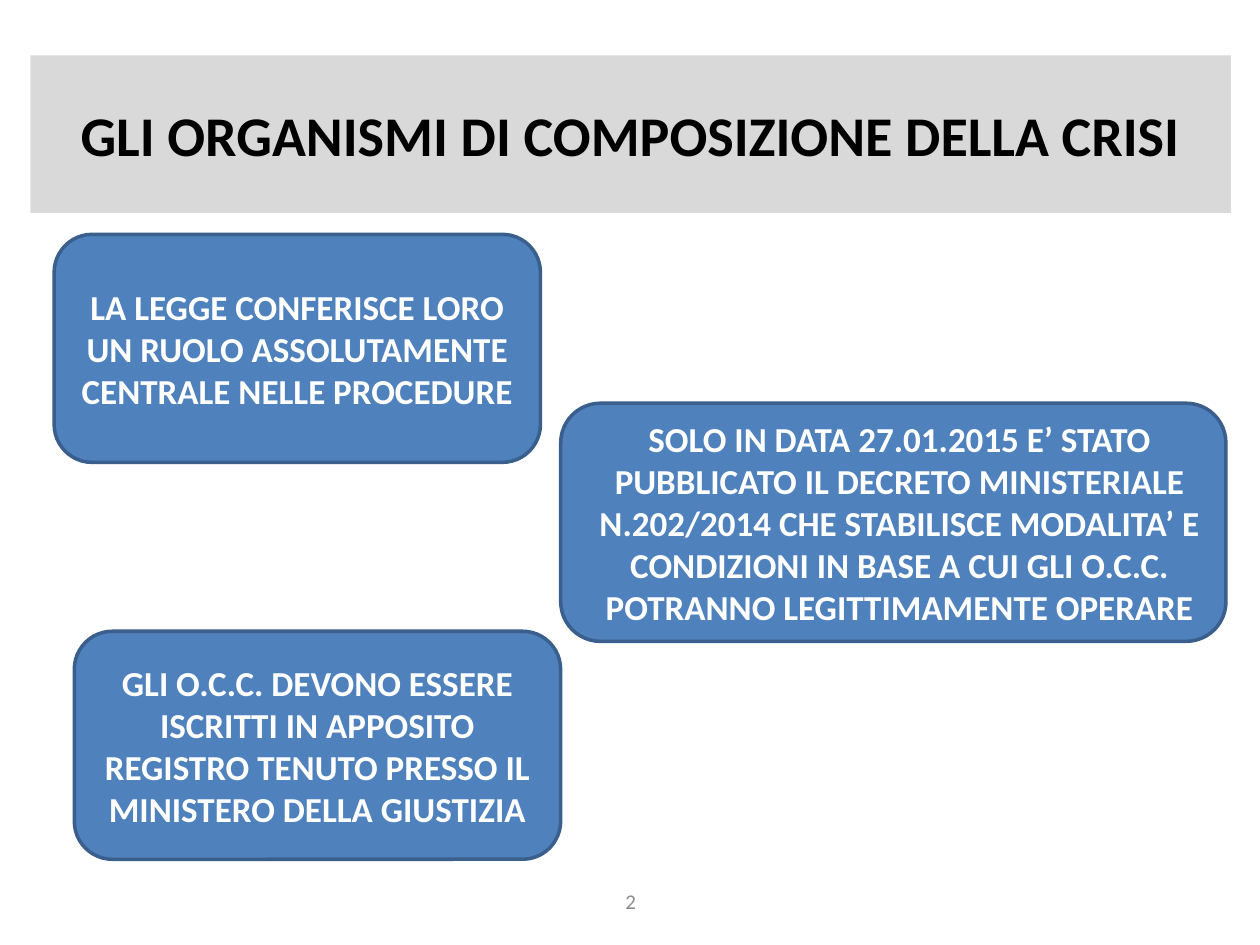
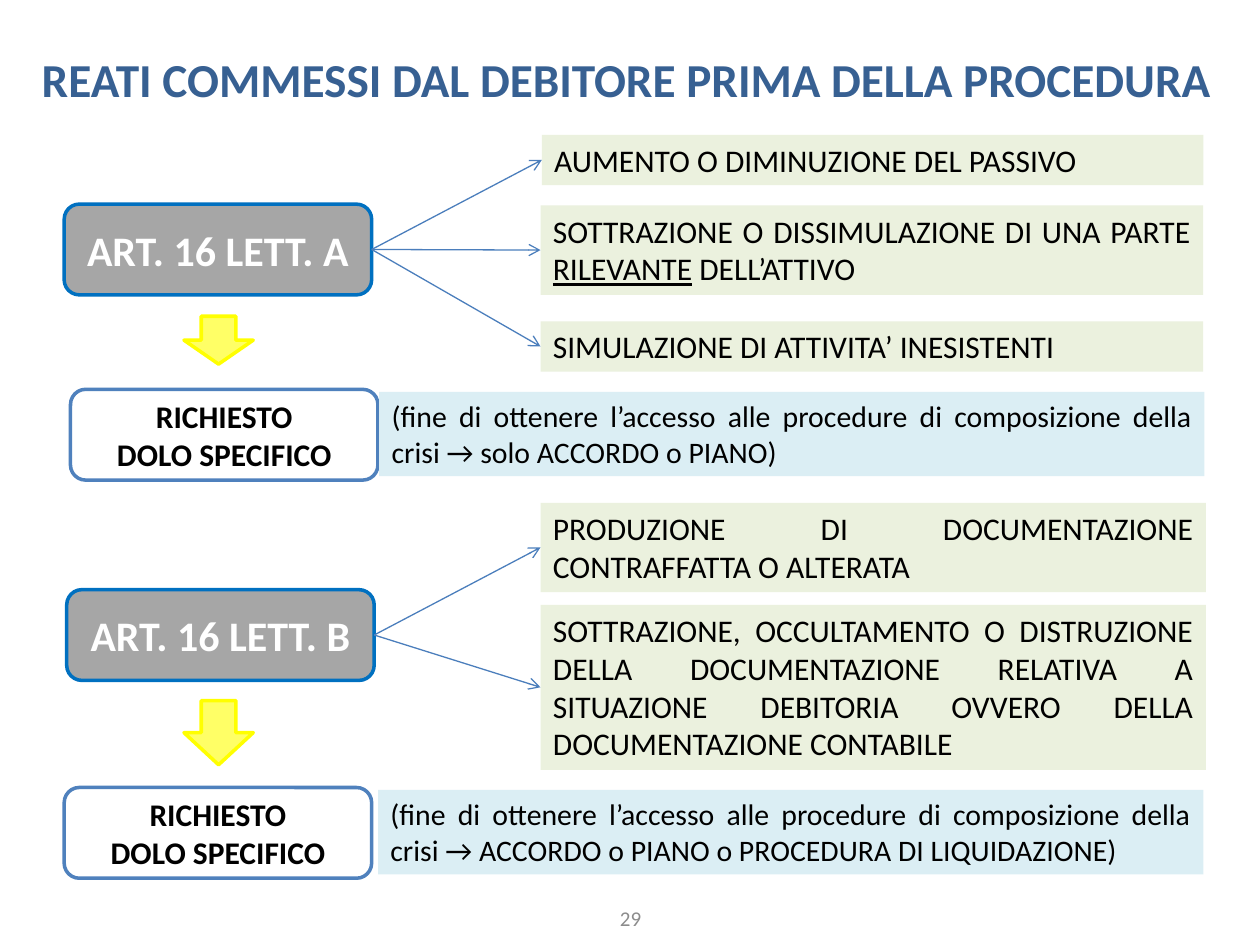
"""Builds two slides on the bodies and offences of the debt crisis law."""
from dataclasses import dataclass

from lxml import etree
from pptx import Presentation
from pptx import util as u
from pptx.dml.color import RGBColor
from pptx.enum import shapes, text
from pptx.oxml.ns import qn

COLUMNS, ROWS = 100, 75
KIND = shapes.MSO_SHAPE
ALIGN = text.PP_ALIGN
MIDDLE = text.MSO_ANCHOR.MIDDLE
TITLE_ONLY = 5
RIGHT_SITE, LEFT_SITE = 3, 1


@dataclass(frozen=True)
class Theme:
    """Colours, font and type sizes shared by the slides."""
    font: str = "Calibri"
    black: str = "000000"
    white: str = "FFFFFF"
    muted: str = "8C8C8C"
    navy: str = "376092"
    band: str = "D9D9D9"
    blue: str = "4F81BD"
    blue_edge: str = "3A5F8C"
    grey: str = "A6A6A6"
    grey_edge: str = "0070C0"
    green: str = "EBF1DE"
    aqua: str = "DBEEF4"
    yellow: str = "FFFF66"
    yellow_edge: str = "FFFF00"
    link: str = "4B7EBC"
    banner_size: int = 32
    title_size: int = 27
    article_size: int = 24
    point_size: int = 20
    act_size: int = 18
    purpose_size: int = 17
    number_size: int = 12
    edge_width: float = 2
    link_width: float = 0.75


class Builder:
    """Holds the style and the current slide, and adds elements to it."""

    def __init__(self, deck, theme):
        """Keep the deck and work out the grid cell."""
        self.deck, self.theme, self.page = deck, theme, None
        self.column = deck.slide_width / COLUMNS
        self.row = deck.slide_height / ROWS

    def place(self, left, top, width, height):
        """Turn grid columns and rows into lengths."""
        return (u.Emu(round(left * self.column)), u.Emu(round(top * self.row)),
                u.Emu(round(width * self.column)), u.Emu(round(height * self.row)))

    def set_text(self, box, lines, size, color, bold=False, align=ALIGN.CENTER, underlined=""):
        """Fill a box with paragraphs, underlining one phrase if given."""
        frame = box.text_frame
        frame.word_wrap = True
        for index, line in enumerate(lines.split("\n")):
            para = frame.paragraphs[0] if index == 0 else frame.add_paragraph()
            pieces = line.partition(underlined) if underlined else (line,)
            for piece in filter(None, pieces):
                span = para.add_run()
                span.text = piece
                if piece == underlined:
                    span.font.underline = True
            para.alignment = align
            font = para.font
            font.name, font.size, font.bold = self.theme.font, u.Pt(size), bold
            font.color.rgb = RGBColor.from_string(color)
        return frame

    def start(self, title, area, size, color, fill=None):
        """Open a slide with its title, on a band if a fill is given."""
        self.page = self.deck.slides.add_slide(self.deck.slide_layouts[TITLE_ONLY])
        box = self.page.shapes.title
        box.left, box.top, box.width, box.height = self.place(*area)
        if fill:
            box.fill.solid()
            box.fill.fore_color.rgb = RGBColor.from_string(fill)
        frame = self.set_text(box, title, size, color, bold=True)
        frame.vertical_anchor = MIDDLE
        frame.auto_size = text.MSO_AUTO_SIZE.NONE

    def number(self, value, top):
        """Add the slide number at the foot."""
        box = self.page.shapes.add_textbox(*self.place(34.2, top, 31.7, 4))
        frame = self.set_text(box, str(value), self.theme.number_size, self.theme.muted)
        frame.vertical_anchor = MIDDLE

    def shape(self, kind, area, fill, edge=None):
        """Add a flat preset shape."""
        box = self.page.shapes.add_shape(kind, *self.place(*area))
        box.shadow.inherit = False
        box.fill.solid()
        box.fill.fore_color.rgb = RGBColor.from_string(fill)
        if edge:
            box.line.color.rgb = RGBColor.from_string(edge)
            box.line.width = u.Pt(self.theme.edge_width)
        else:
            box.line.fill.background()
        return box

    def card(self, area, lines, fill, edge, size, color):
        """Add a rounded box with bold centred text."""
        box = self.shape(KIND.ROUNDED_RECTANGLE, area, fill, edge)
        self.set_text(box, lines, size, color, bold=True).vertical_anchor = MIDDLE
        return box

    def point(self, area, lines):
        """Add a blue statement card."""
        theme = self.theme
        return self.card(area, lines, theme.blue, theme.blue_edge, theme.point_size, theme.white)

    def panel(self, area, lines, fill, size, underlined=""):
        """Add a tinted panel with justified text."""
        box = self.shape(KIND.RECTANGLE, area, fill)
        frame = self.set_text(box, lines, size, self.theme.black,
                              align=ALIGN.JUSTIFY, underlined=underlined)
        frame.vertical_anchor = text.MSO_ANCHOR.TOP
        frame.auto_size = text.MSO_AUTO_SIZE.SHAPE_TO_FIT_TEXT
        return box

    def arrow(self, source, target):
        """Link the right side of one box to the left side of another."""
        link = self.page.shapes.add_connector(shapes.MSO_CONNECTOR.STRAIGHT, 0, 0, 0, 0)
        link.begin_connect(source, RIGHT_SITE)
        link.end_connect(target, LEFT_SITE)
        link.line.color.rgb = RGBColor.from_string(self.theme.link)
        link.line.width = u.Pt(self.theme.link_width)
        properties = link.element.spPr
        etree.SubElement(properties.find(qn("a:ln")), qn("a:tailEnd"), type="arrow")
        etree.SubElement(properties, qn("a:effectLst"))

    def offence(self, article, corner, acts, pointer, intent, purpose, purpose_corner):
        """Add an article, the acts it punishes and the intent it requires."""
        theme = self.theme
        source = self.card((*corner, 24.4, 7.2), article, theme.grey, theme.grey_edge,
                           theme.article_size, theme.white)
        for area, act, underlined in acts:
            self.arrow(source, self.panel(area, act, theme.green, theme.act_size, underlined))
        top, height = pointer
        self.shape(KIND.DOWN_ARROW, (14.6, top, 5.5, height), theme.yellow, theme.yellow_edge)
        self.card((*intent, 24.4, 7.2), "RICHIESTO\nDOLO SPECIFICO", theme.white, theme.blue,
                  theme.act_size, theme.black)
        self.panel((*purpose_corner, 65.5, 6.7),
                   "(fine di ottenere l’accesso alle procedure di composizione della crisi → "
                   + purpose + ")", theme.aqua, theme.purpose_size)


def bodies_slide(builder):
    """Build the slide on the crisis settlement bodies."""
    theme = builder.theme
    builder.start("GLI ORGANISMI DI COMPOSIZIONE DELLA CRISI", (2.4, 4.4, 95.3, 12.5),
                  theme.banner_size, theme.black, theme.band)
    builder.point((4.3, 18.6, 38.6, 18.1),
                  "LA LEGGE CONFERISCE LORO UN RUOLO ASSOLUTAMENTE CENTRALE NELLE PROCEDURE")
    decree = builder.point(
        (44.5, 32, 52.8, 18.9),
        "SOLO IN DATA 27.01.2015 E’ STATO PUBBLICATO IL DECRETO MINISTERIALE N.202/2014 "
        "CHE STABILISCE MODALITA’ E CONDIZIONI IN BASE A CUI GLI O.C.C. POTRANNO "
        "LEGITTIMAMENTE OPERARE")
    decree.text_frame.margin_left = u.Inches(0.2)
    builder.point((5.9, 50.1, 38.6, 18.1),
                  "GLI O.C.C. DEVONO ESSERE ISCRITTI IN APPOSITO REGISTRO TENUTO PRESSO IL "
                  "MINISTERO DELLA GIUSTIZIA")
    builder.number(2, 69.5)


def offences_slide(builder):
    """Build the slide on offences committed before the procedure."""
    theme = builder.theme
    builder.start("REATI COMMESSI DAL DEBITORE PRIMA DELLA PROCEDURA", (0, 0, 99.4, 12.5),
                  theme.title_size, theme.navy)
    builder.offence(
        "ART. 16 LETT. A", (5.1, 16.2),
        [((43, 10.7, 52.5, 4), "AUMENTO O DIMINUZIONE DEL PASSIVO", ""),
         ((42.9, 16.3, 52.6, 7.1),
          "SOTTRAZIONE O DISSIMULAZIONE DI UNA PARTE RILEVANTE DELL’ATTIVO", "RILEVANTE"),
         ((42.9, 25.5, 52.6, 4), "SIMULAZIONE DI ATTIVITA’ INESISTENTI", "")],
        (25.1, 3.8), (5.6, 30.9), "solo ACCORDO o PIANO", (30.1, 31.1))
    builder.offence(
        "ART. 16 LETT. B", (5.3, 46.8),
        [((42.9, 39.9, 52.8, 7.1), "PRODUZIONE DI DOCUMENTAZIONE CONTRAFFATTA O ALTERATA", ""),
         ((42.9, 48, 52.8, 13.1),
          "SOTTRAZIONE, OCCULTAMENTO O DISTRUZIONE DELLA DOCUMENTAZIONE RELATIVA A "
          "SITUAZIONE DEBITORIA OVVERO DELLA DOCUMENTAZIONE CONTABILE", "")],
        (55.6, 5.1), (5.1, 62.5), "ACCORDO o PIANO o PROCEDURA DI LIQUIDAZIONE", (30, 62.7))
    builder.number(29, 70.9)


def main():
    """Build and save the deck."""
    deck = Presentation()
    deck.slide_width, deck.slide_height = u.Inches(10), u.Inches(7.5)
    builder = Builder(deck, Theme())
    bodies_slide(builder)
    offences_slide(builder)
    deck.save("out.pptx")


if __name__ == "__main__":
    main()
